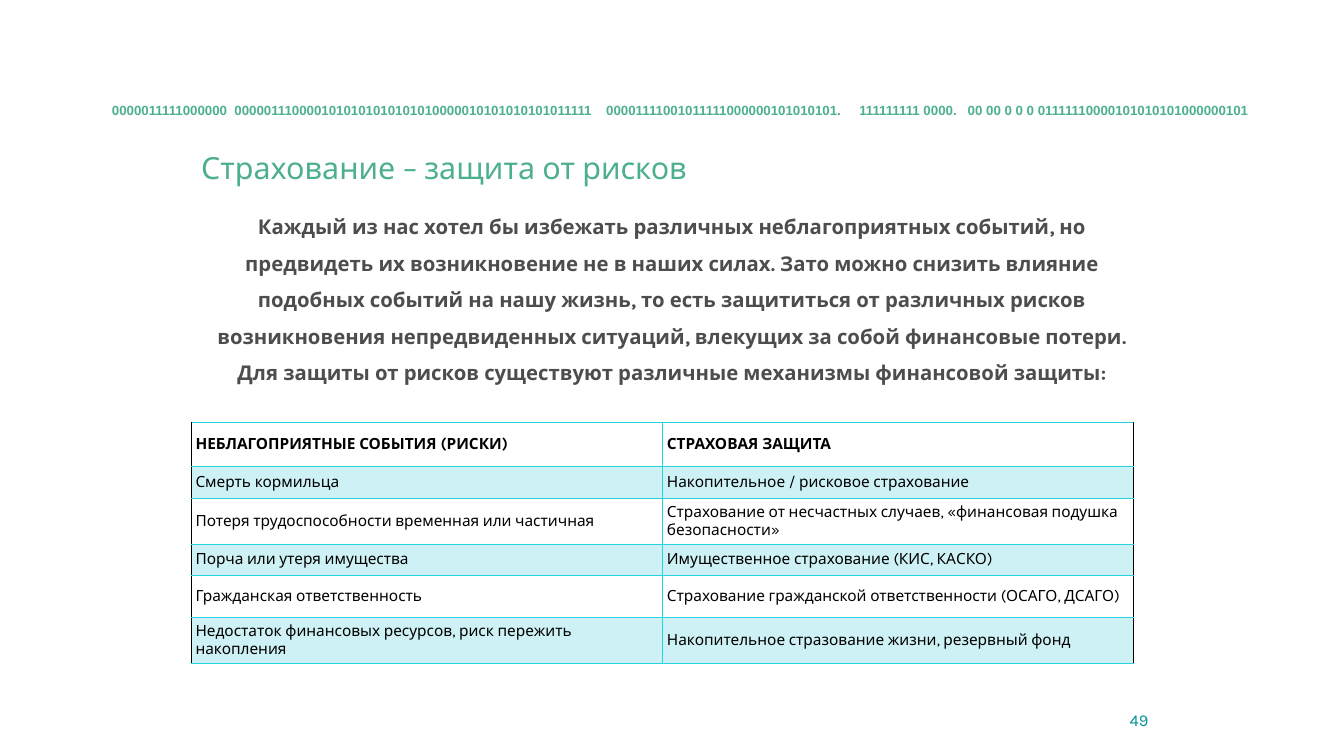
from dataclasses import dataclass

from lxml.etree import SubElement
from pptx import Presentation
from pptx.dml.color import RGBColor
from pptx.enum.text import MSO_ANCHOR, MSO_AUTO_SIZE, PP_ALIGN
from pptx.oxml.ns import qn
from pptx.util import Inches, Pt

HEADING = "Страхование – защита от рисков"
BINARY_STRIP = (
    "0000011111000000  0000011100001010101010101010000010101010101011111    "
    "00001111001011111000000101010101.     111111111 0000.   "
    "00 00 0 0 0 01111110000101010101000000101"
)
INTRO = [
    "Каждый из нас хотел бы избежать различных неблагоприятных событий, но "
    "предвидеть их возникновение не в наших силах. Зато можно снизить влияние "
    "подобных событий на нашу жизнь, то есть защититься от различных рисков "
    "возникновения непредвиденных ситуаций, влекущих за собой финансовые потери.",
    "Для защиты от рисков существуют различные механизмы финансовой защиты:",
]
RISKS = [
    ("НЕБЛАГОПРИЯТНЫЕ СОБЫТИЯ (РИСКИ)", "СТРАХОВАЯ ЗАЩИТА"),
    ("Смерть кормильца", "Накопительное / рисковое страхование"),
    ("Потеря трудоспособности временная или частичная",
     "Страхование от несчастных случаев, «финансовая подушка безопасности»"),
    ("Порча или утеря имущества", "Имущественное страхование (КИС, КАСКО)"),
    ("Гражданская ответственность",
     "Страхование гражданской ответственности (ОСАГО, ДСАГО)"),
    ("Недостаток финансовых ресурсов, риск пережить накопления",
     "Накопительное стразование жизни, резервный фонд"),
]
PAGE_NUMBER = "49"

AREAS = {
    "strip": (6.41, 13.2, 88.41, 2.8),
    "heading": (14.21, 19.07, 71.54, 7.07),
    "intro": (14.66, 26.13, 70.68, 25),
    "risks": (14.21, 55.87, 70.15, 31.4),
    "number": (80.28, 92.6, 5.92, 5.33),
}
ROW_SHARES = (5.87, 4.13, 6.07, 4.13, 5.6, 5.6)


@dataclass(frozen=True)
class Theme:
    font: str = "Karla"
    strip_font: str = "Arial"
    green: str = "4CAF90"
    teal: str = "00909B"
    grey: str = "4D4D4C"
    black: str = "000000"
    rule: str = "23D4DE"
    band: str = "0EBACE"
    band_alpha: int = 20
    heading_size: float = 43.5
    intro_size: float = 29
    table_size: float = 22
    strip_size: float = 19
    number_size: float = 23.6


THEME = Theme()
prs = Presentation()
prs.slide_width, prs.slide_height = Inches(26.67), Inches(15)


def area(name):
    sides = (prs.slide_width, prs.slide_height) * 2
    return [int(side * share / 100) for side, share in zip(sides, AREAS[name])]


def place(shape, name):
    shape.left, shape.top, shape.width, shape.height = area(name)


def set_insets(holder, horizontal, vertical):
    holder.margin_left = holder.margin_right = Inches(horizontal)
    holder.margin_top = holder.margin_bottom = Inches(vertical)


def style(paragraph, size, color, bold=False, align=PP_ALIGN.LEFT, font=THEME.font):
    paragraph.alignment = align
    paragraph.font.name = font
    paragraph.font.size = Pt(size)
    paragraph.font.bold = bold
    paragraph.font.color.rgb = RGBColor.from_string(color)


def add_border(cell, side, color):
    line = SubElement(cell._tc.get_or_add_tcPr(), qn(f"a:ln{side}"), w=str(Pt(1)))
    SubElement(SubElement(line, qn("a:solidFill")), qn("a:srgbClr"), val=color)


def fill_band(cell):
    cell.fill.solid()
    cell.fill.fore_color.rgb = RGBColor.from_string(THEME.band)
    color = cell._tc.tcPr.find(qn("a:solidFill")).find(qn("a:srgbClr"))
    SubElement(color, qn("a:alpha"), val=str(THEME.band_alpha * 1000))


slide = prs.slides.add_slide(prs.slide_layouts[1])

heading = slide.shapes.title
place(heading, "heading")
heading.text = HEADING
heading_frame = heading.text_frame
heading_frame.vertical_anchor = MSO_ANCHOR.TOP
heading_frame.auto_size = MSO_AUTO_SIZE.NONE
set_insets(heading_frame, 0.2, 0.1)
style(heading_frame.paragraphs[0], THEME.heading_size, THEME.green)

intro = slide.placeholders[1]
place(intro, "intro")
intro_frame = intro.text_frame
intro_frame.text = "\n".join(INTRO)
intro_frame.auto_size = MSO_AUTO_SIZE.SHAPE_TO_FIT_TEXT
set_insets(intro_frame, 0.09, 0.09)
for paragraph in intro_frame.paragraphs:
    properties = paragraph._p.get_or_add_pPr()
    properties.set("marL", "0")
    properties.set("indent", "0")
    SubElement(properties, qn("a:buNone"))
    paragraph.line_spacing = 1.5
    paragraph.space_before = Pt(0)
    style(paragraph, THEME.intro_size, THEME.grey, True, PP_ALIGN.CENTER)

strip = slide.shapes.add_textbox(*area("strip")).text_frame
strip.text = BINARY_STRIP
strip.word_wrap = False
strip.auto_size = MSO_AUTO_SIZE.SHAPE_TO_FIT_TEXT
style(strip.paragraphs[0], THEME.strip_size, THEME.green, True,
      PP_ALIGN.CENTER, THEME.strip_font)

number = slide.shapes.add_textbox(*area("number")).text_frame
number.text = PAGE_NUMBER
number.word_wrap = True
number.vertical_anchor = MSO_ANCHOR.MIDDLE
set_insets(number, 0.2, 0.1)
style(number.paragraphs[0], THEME.number_size, THEME.teal, align=PP_ALIGN.RIGHT)

risks = slide.shapes.add_table(len(RISKS), len(RISKS[0]), *area("risks")).table
for row, share in zip(risks.rows, ROW_SHARES):
    row.height = int(prs.slide_height * share / 100)
for r, texts in enumerate(RISKS):
    for c, text in enumerate(texts):
        cell = risks.cell(r, c)
        cell.text = text
        cell.vertical_anchor = MSO_ANCHOR.MIDDLE
        set_insets(cell, 0.09, 0.09)
        style(cell.text_frame.paragraphs[0], THEME.table_size, THEME.black, r == 0)
        add_border(cell, "L", THEME.black if c == 0 else THEME.rule)
        add_border(cell, "R", THEME.black if c == len(texts) - 1 else THEME.rule)
        add_border(cell, "T", THEME.rule)
        add_border(cell, "B", THEME.rule)
        if r % 2:
            fill_band(cell)
        else:
            cell.fill.background()

prs.save("out.pptx")
